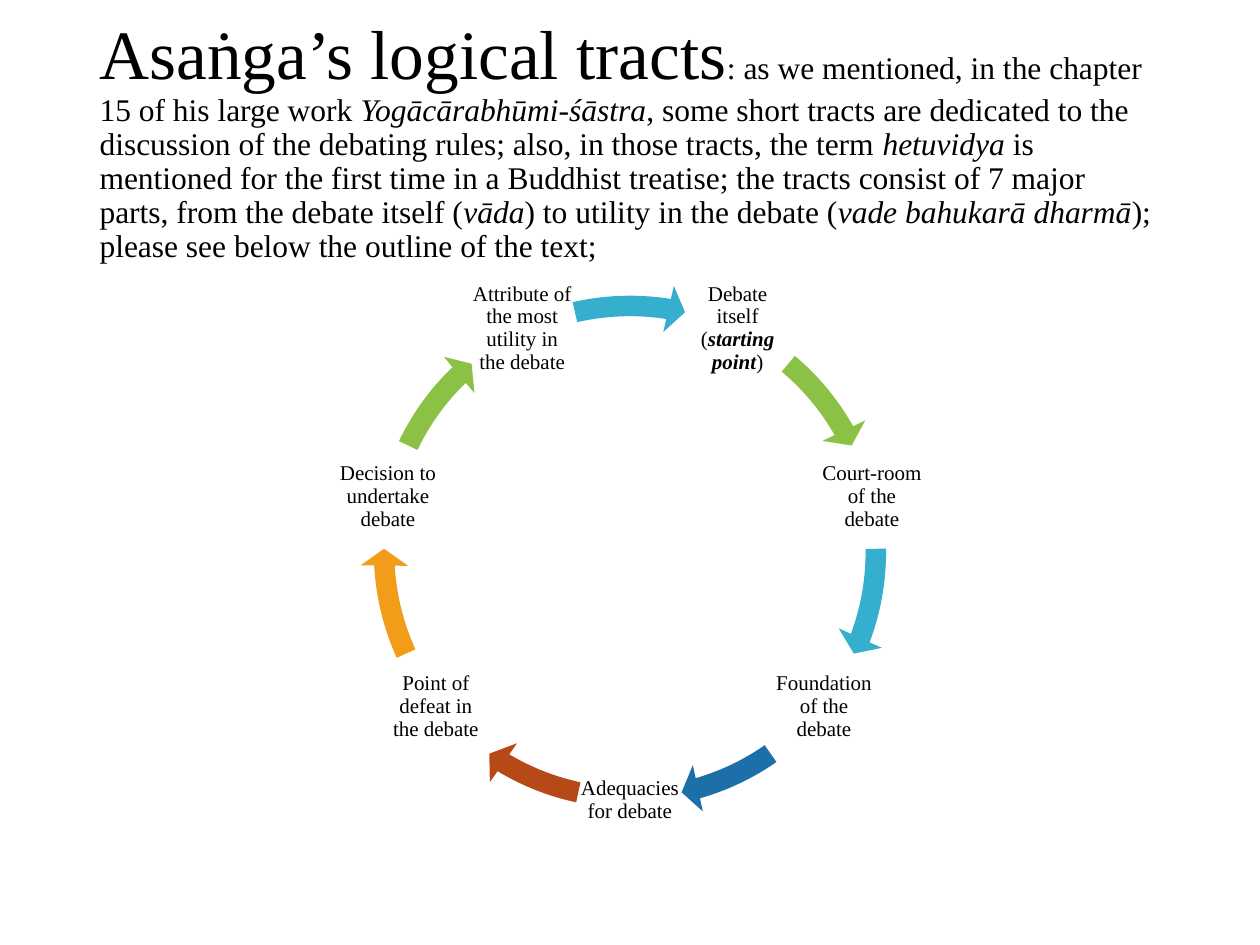
from dataclasses import dataclass
from math import cos, radians, sin

from pptx import Presentation
from pptx.dml.color import RGBColor
from pptx.enum.shapes import MSO_SHAPE
from pptx.enum.text import MSO_ANCHOR, MSO_AUTO_SIZE, PP_ALIGN
from pptx.util import Inches, Pt

FONT = "Times New Roman"
CENTER_X, CENTER_Y = 5, 4.38
LABEL_RADIUS = 1.97
LABEL_SIZE = 0.83
LABEL_INSET = 0.02
RING_SIZE = 4.28
ITALIC = {"italic": True}
BOLD_ITALIC = {"bold": True, "italic": True}


@dataclass(frozen=True)
class Run:
    text: str
    style: dict


@dataclass(frozen=True)
class Step:
    """A label and the arrow after it, with arrow angles in degrees clockwise from east."""
    runs: list[Run]
    color: str
    tail: float
    head: float


def plain(text: str) -> Run:
    return Run(text, {})


TITLE = [
    Run("Asaṅga’s logical tracts", {"size": Pt(39.6)}),
    plain(": as we mentioned, in the chapter 15 of his large work "),
    Run("Yogācārabhūmi-śāstra", ITALIC),
    plain(", some short tracts are dedicated to the discussion of the debating rules; "
          "also, in those tracts, the term "),
    Run("hetuvidya", ITALIC),
    plain(" is mentioned for the first time in a Buddhist treatise; the tracts consist "
          "of 7 major parts, from the debate itself ("),
    Run("vāda", ITALIC),
    plain(") to utility in the debate ("),
    Run("vade bahukarā dharmā", ITALIC),
    plain("); please see below the outline of the text;"),
]

STEPS = [
    Step([plain("Debate itself ("), Run("starting point", BOLD_ITALIC), plain(")")],
         "8BC145", 310.08, 330.46),
    Step([plain("Court-room of the debate")], "36AFCE", 359.28, 20.52),
    Step([plain("Foundation of the debate")], "1D6FA9", 55.12, 73.97),
    Step([plain("Adequacies for debate")], "B74919", 102.12, 120.97),
    Step([plain("Point of defeat in the debate")], "F19D19", 155.57, 176.81),
    Step([plain("Decision to undertake debate")], "8BC145", 205.63, 226.01),
    Step([plain("Attribute of the most utility in the debate")], "36AFCE", 257.06, 279.03),
]


def rgb(value: str) -> RGBColor:
    return RGBColor.from_string(value)


def write(tf, runs: list[Run], size: float, align: PP_ALIGN) -> None:
    tf.word_wrap = True
    tf.auto_size = MSO_AUTO_SIZE.NONE
    tf.vertical_anchor = MSO_ANCHOR.MIDDLE
    p = tf.paragraphs[0]
    p.alignment = align
    p.line_spacing = 0.9
    for run in runs:
        r = p.add_run()
        r.text = run.text
        r.font.color.rgb = rgb("000000")
        for name, value in ({"name": FONT, "size": Pt(size)} | run.style).items():
            setattr(r.font, name, value)


def add_title(s) -> None:
    title = s.shapes.title
    title.left, title.top = Inches(0.69), Inches(0.4)
    title.width, title.height = Inches(8.62), Inches(1.45)
    write(title.text_frame, TITLE, 18, PP_ALIGN.LEFT)


def add_label(s, runs: list[Run], angle: float) -> None:
    x = CENTER_X + LABEL_RADIUS * cos(radians(angle)) - LABEL_SIZE / 2
    y = CENTER_Y + LABEL_RADIUS * sin(radians(angle)) - LABEL_SIZE / 2
    tf = s.shapes.add_textbox(Inches(x), Inches(y), Inches(LABEL_SIZE),
                              Inches(LABEL_SIZE)).text_frame
    for side in ("left", "top", "right", "bottom"):
        setattr(tf, f"margin_{side}", Inches(LABEL_INSET))
    write(tf, runs, 12, PP_ALIGN.CENTER)


def add_arrow(s, step: Step) -> None:
    sp = s.shapes.add_shape(
        MSO_SHAPE.CIRCULAR_ARROW, Inches(CENTER_X - RING_SIZE / 2),
        Inches(CENTER_Y - RING_SIZE / 2), Inches(RING_SIZE), Inches(RING_SIZE))
    # Angles are stored in 60000ths of a degree, and adjustments in 100000ths.
    values = (0.038, 3.91 * 0.6, step.head * 0.6, step.tail * 0.6, 0.044)
    for i, value in enumerate(values):
        sp.adjustments[i] = value
    sp.shadow.inherit = False
    sp.fill.solid()
    sp.fill.fore_color.rgb = rgb(step.color)
    sp.line.fill.background()


def main() -> None:
    prs = Presentation()
    prs.slide_width, prs.slide_height = Inches(10), Inches(7.5)
    s = prs.slides.add_slide(prs.slide_layouts[5])
    add_title(s)
    sector = 360 / len(STEPS)
    for i, step in enumerate(STEPS):
        add_label(s, step.runs, -90 + sector * (i + 0.5))
        add_arrow(s, step)
    prs.save("out.pptx")


if __name__ == "__main__":
    main()
